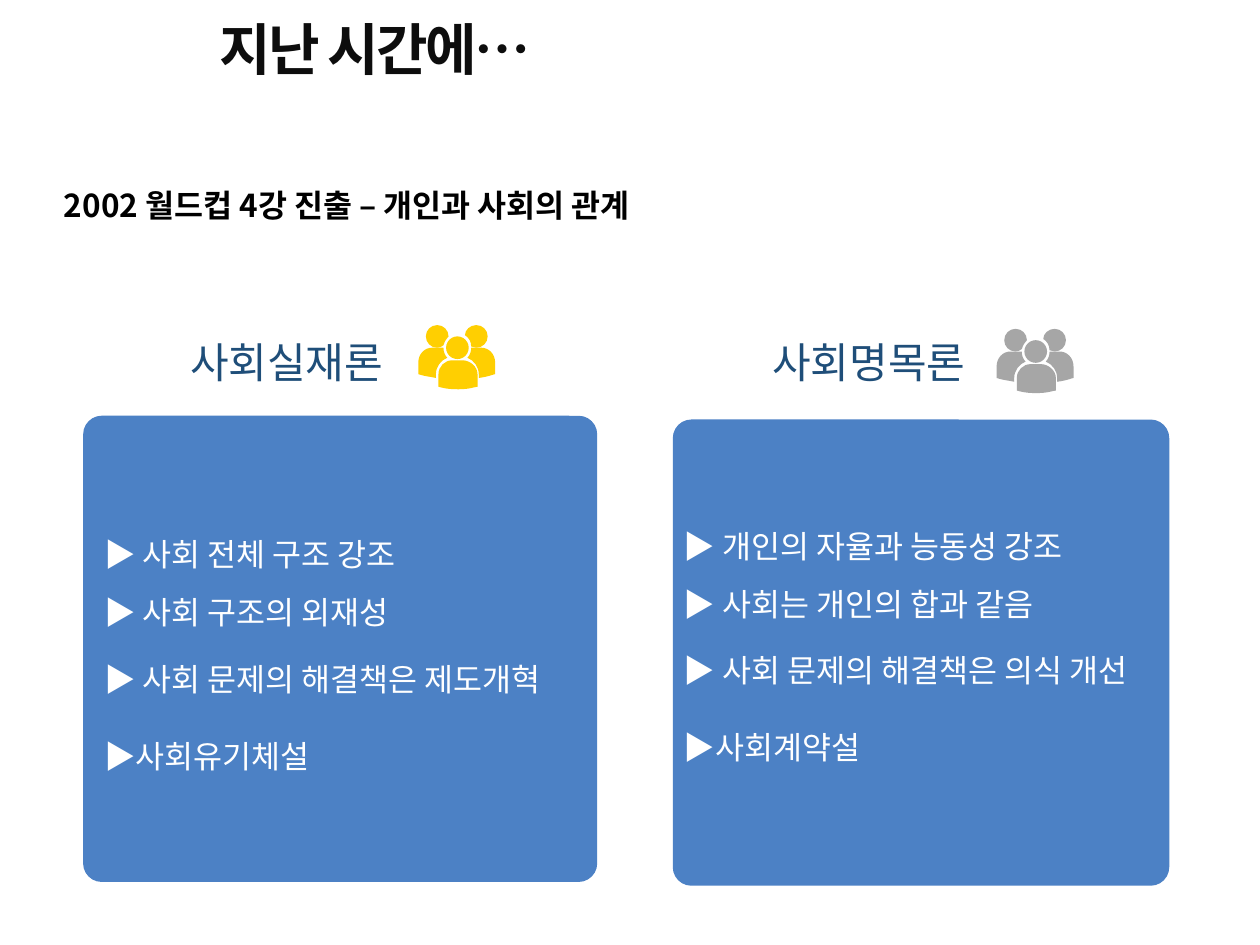
import pptx
import pptx.util
import pptx.dml.color
import pptx.enum.shapes
import pptx.enum.text
import pptx.oxml.ns
import lxml.etree

Inches = pptx.util.Inches
SHAPES = pptx.enum.shapes.MSO_SHAPE
qn = pptx.oxml.ns.qn
COLORS = {
    "title": "0D0D0D",
    "black": "000000",
    "white": "FFFFFF",
    "heading": "1F4E79",
    "panel": "4C81C5",
    "gold": "FFCF01",
    "gray": "A6A6A6",
}
KOREAN, LATIN = "Noto Sans CJK KR", "Calibri"
ROW_OFFSETS = (0, 0.46, 0.99, 1.6)

# Outlines of the people icon in hundredths of an inch:
# a start point, then lines (x, y) and Bezier curves (x1, y1, x2, y2, x, y).
RIGHT_HEAD = [(37, 8), (40, 10, 42, 13, 42, 17), (43, 17, 45, 18, 46, 18),
              (51, 18, 55, 14, 55, 9), (55, 4, 51, 0, 46, 0), (41, 0, 37, 4, 37, 8)]
FRONT_BODY = [(35, 28), (27, 28), (21, 28, 16, 33, 16, 39), (16, 49),
              (23, 51, 28, 51, 32, 51), (41, 51, 45, 49, 47, 49), (47, 39),
              (47, 33, 41, 28, 35, 28)]
RIGHT_BODY = [(50, 18), (42, 18), (42, 21, 41, 24, 39, 26), (44, 28, 48, 33, 48, 39),
              (48, 42), (56, 41, 60, 39, 61, 39), (61, 30), (61, 23, 56, 18, 50, 18)]
LEFT_HEAD = [(15, 18), (17, 18, 19, 17, 20, 16), (21, 13, 22, 11, 24, 9),
             (24, 4, 20, 0, 15, 0), (10, 0, 6, 4, 6, 9), (6, 14, 10, 18, 15, 18)]
LEFT_BODY = [(23, 26), (21, 24, 20, 21, 20, 18), (11, 18), (5, 18, 0, 23, 0, 30),
             (0, 39), (6, 41, 10, 41, 14, 42), (14, 39), (14, 33, 18, 28, 23, 26)]


def rgb(color):
    return pptx.dml.color.RGBColor.from_string(COLORS[color])


def set_font(font, name, size, color, bold=None):
    font.name = name
    font.size = pptx.util.Pt(size)
    font.color.rgb = rgb(color)
    font.bold = bold


def fill_plain(sp, color):
    sp.shadow.inherit = False
    sp.fill.solid()
    sp.fill.fore_color.rgb = rgb(color)
    sp.line.fill.background()


def add_title(s, text):
    sp = s.shapes.title
    sp.left, sp.top, sp.width, sp.height = (Inches(v) for v in (1.64, -0.01, 8.02, 0.85))
    tf = sp.text_frame
    tf.vertical_anchor = pptx.enum.text.MSO_ANCHOR.MIDDLE
    p = tf.paragraphs[0]
    p.text = text
    p.alignment = pptx.enum.text.PP_ALIGN.LEFT
    p.line_spacing = 0.9
    set_font(p.font, KOREAN, 32, "title", True)
    p.font._element.set("spc", "-150")


def add_text(s, x, y, w, h, text, **font):
    """Add a one-paragraph text box and return its paragraph."""
    tf = s.shapes.add_textbox(Inches(x), Inches(y), Inches(w), Inches(h)).text_frame
    tf.word_wrap = True
    tf.auto_size = pptx.enum.text.MSO_AUTO_SIZE.SHAPE_TO_FIT_TEXT
    p = tf.paragraphs[0]
    p.text = text
    set_font(p.font, **font)
    return p


def add_panel(s, x, y, w, h):
    sp = s.shapes.add_shape(SHAPES.ROUNDED_RECTANGLE, Inches(x), Inches(y), Inches(w), Inches(h))
    sp.adjustments[0] = 0.04
    fill_plain(sp, "panel")


def add_points(s, x, y, points):
    for offset, (width, marker, text) in zip(ROW_OFFSETS, points):
        p = add_text(s, x, y + offset, width, 0.4, marker, name=KOREAN, size=18, color="white")
        r = p.add_run()
        r.text = text
        r.font.name = LATIN


def add_outline(shapes, x, y, outline, color):
    """Add a closed outline, bending the segments that carry control points."""
    ends = [segment[-2:] for segment in outline]
    left, top = (min(values) for values in zip(*ends))
    builder = shapes.build_freeform(*ends[0], scale=Inches(0.01))
    builder.add_line_segments(ends[1:], close=True)
    sp = builder.convert_to_shape(Inches(x), Inches(y))
    for segment, line in zip(outline[1:], list(sp._element.iter(qn("a:lnTo")))):
        if len(segment) == 6:
            curve = lxml.etree.Element(qn("a:cubicBezTo"))
            for px, py in zip(segment[::2], segment[1::2]):
                lxml.etree.SubElement(curve, qn("a:pt"), x=str(px - left), y=str(py - top))
            line.getparent().replace(line, curve)
    fill_plain(sp, color)


def add_people(s, x, y, color):
    shapes = s.shapes.add_group_shape().shapes
    add_outline(shapes, x, y, RIGHT_HEAD, color)
    head = shapes.add_shape(
        SHAPES.OVAL, Inches(x + 0.22), Inches(y + 0.09), Inches(0.18), Inches(0.18))
    fill_plain(head, color)
    for outline in (FRONT_BODY, RIGHT_BODY, LEFT_HEAD, LEFT_BODY):
        add_outline(shapes, x, y, outline, color)


def main():
    prs = pptx.Presentation()
    prs.slide_width, prs.slide_height = Inches(10), Inches(7.5)
    s = prs.slides.add_slide(prs.slide_layouts[5])

    add_title(s, "지난 시간에…")
    add_text(s, 0.41, 1.43, 4.8, 0.4, "2002 월드컵 4강 진출 – 개인과 사회의 관계",
             name=KOREAN, size=18, color="black", bold=True)

    add_panel(s, 0.66, 3.3, 4.08, 3.7)
    add_panel(s, 5.34, 3.33, 3.94, 3.7)
    for x, heading in ((1.41, "사회실재론"), (6.03, "사회명목론")):
        add_text(s, x, 2.62, 1.91, 0.5, heading, name=LATIN, size=24, color="heading")

    add_points(s, 0.73, 4.2, [
        (2.98, "▶ ", "사회 전체 구조 강조"),
        (2.96, "▶ ", "사회 구조의 외재성"),
        (4, "▶ ", "사회 문제의 해결책은 제도개혁"),
        (2.43, "▶", "사회유기체설"),
    ])
    add_points(s, 5.33, 4.13, [
        (3.54, "▶ ", "개인의 자율과 능동성 강조"),
        (3.32, "▶ ", "사회는 개인의 합과 같음"),
        (4.15, "▶ ", "사회 문제의 해결책은 의식 개선"),
        (1.97, "▶", "사회계약설"),
    ])

    add_people(s, 3.32, 2.58, "gold")
    add_people(s, 7.91, 2.61, "gray")
    prs.save("out.pptx")


if __name__ == "__main__":
    main()
